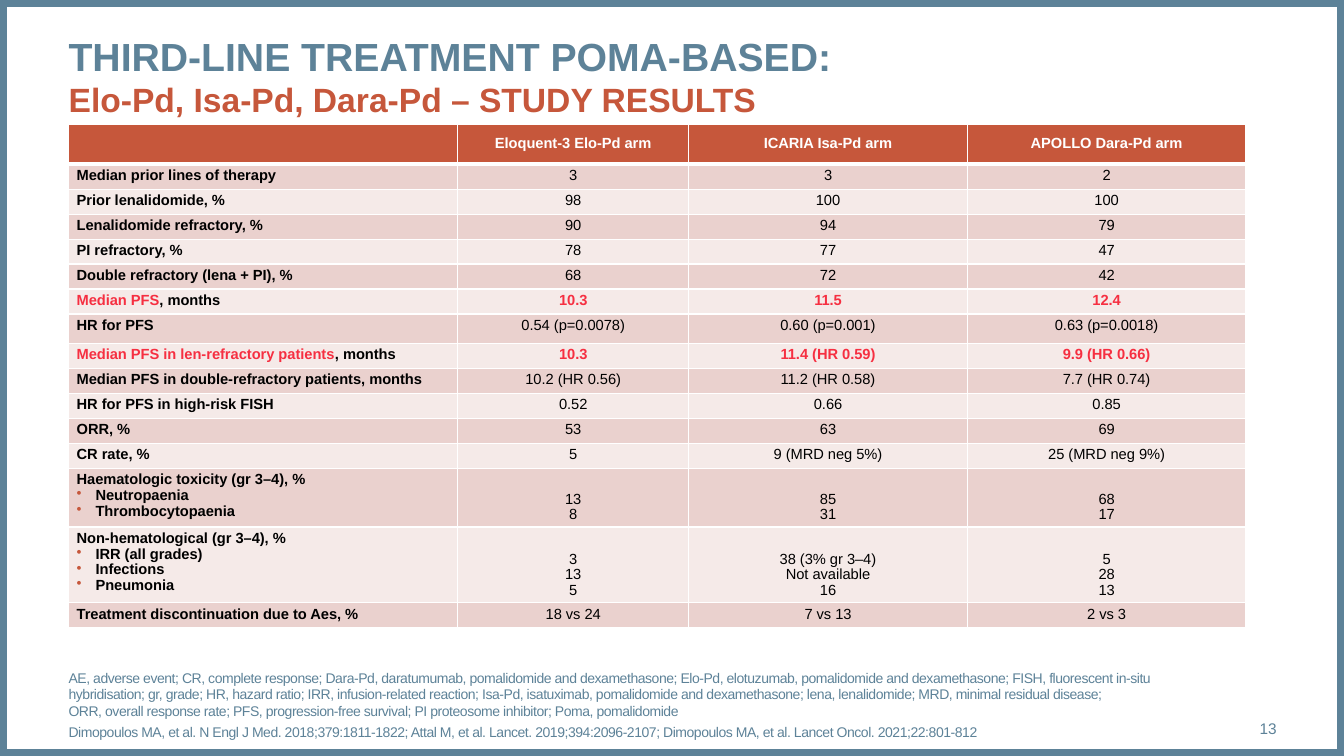
from dataclasses import dataclass
from lxml import etree
from pptx import Presentation
from pptx import util as u
from pptx.dml import color
from pptx.enum import shapes, text
from pptx.oxml import ns

Pt = u.Pt


@dataclass(frozen=True)
class Theme:
    font: str = "Arial"
    blue: str = "5D8298"
    rust: str = "C6573B"
    red: str = "F62F41"
    ink: str = "000000"
    white: str = "FFFFFF"
    bands: tuple = ("EAD1CE", "F5EAE8")
    head: float = 28
    sub: float = 24
    cell: float = 10.5
    page: float = 11
    note: float = 10


T = Theme()
LEFT = 49
WIDE, HIGH = 960, 540
COLS = (278, 165, 199, 199)
ROW = 17.7
TALL = {0: 28.5, 7: 21, 13: 41, 14: 53}
KEY = (6, 8)

HEADS = ("", "Eloquent-3 Elo-Pd arm", "ICARIA Isa-Pd arm", "APOLLO Dara-Pd arm")
ROWS = (
    ("Median prior lines of therapy", "3", "3", "2"),
    ("Prior lenalidomide, %", "98", "100", "100"),
    ("Lenalidomide refractory, %", "90", "94", "79"),
    ("PI refractory, %", "78", "77", "47"),
    ("Double refractory (lena + PI), %", "68", "72", "42"),
    ("Median PFS, months", "10.3", "11.5", "12.4"),
    ("HR for PFS", "0.54 (p=0.0078)", "0.60 (p=0.001)", "0.63 (p=0.0018)"),
    ("Median PFS in len-refractory patients, months",
     "10.3", "11.4 (HR 0.59)", "9.9 (HR 0.66)"),
    ("Median PFS in double-refractory patients, months",
     "10.2 (HR 0.56)", "11.2 (HR 0.58)", "7.7 (HR 0.74)"),
    ("HR for PFS in high-risk FISH", "0.52", "0.66", "0.85"),
    ("ORR, %", "53", "63", "69"),
    ("CR rate, %", "5", "9 (MRD neg 5%)", "25 (MRD neg 9%)"),
    ("Haematologic toxicity (gr 3–4), %\nNeutropaenia\nThrombocytopaenia",
     "13\n8", "85\n31", "68\n17"),
    ("Non-hematological (gr 3–4), %\nIRR (all grades)\nInfections\nPneumonia",
     "3\n13\n5", "38 (3% gr 3–4)\nNot available\n16", "5\n28\n13"),
    ("Treatment discontinuation due to Aes, %", "18 vs 24", "7 vs 13", "2 vs 3"),
)
TERMS = (
    "AE, adverse event; CR, complete response; Dara-Pd, daratumumab, pomalidomide "
    "and dexamethasone; Elo-Pd, elotuzumab, pomalidomide and dexamethasone; FISH, "
    "fluorescent in-situ hybridisation; gr, grade; HR, hazard ratio; IRR, "
    "infusion-related reaction; Isa-Pd, isatuximab, pomalidomide and dexamethasone; "
    "lena, lenalidomide; MRD, minimal residual disease;",
    "ORR, overall response rate; PFS, progression-free survival; PI proteosome "
    "inhibitor; Poma, pomalidomide",
)
CITES = (
    "Dimopoulos MA, et al. N Engl J Med. 2018;379:1811-1822; Attal M, et al. Lancet. "
    "2019;394:2096-2107; Dimopoulos MA, et al. Lancet Oncol. 2021;22:801-812",
)


def rgb(tint):
    return color.RGBColor.from_string(tint)


def add_run(para, words, size, tint, bold=False):
    run = para.add_run()
    run.text = words
    font = run.font
    font.name, font.size, font.bold = T.font, Pt(size), bold
    font.color.rgb = rgb(tint)
    return run


def add_box(slide, x, y, w, h, anchor):
    frame = slide.shapes.add_textbox(Pt(x), Pt(y), Pt(w), Pt(h)).text_frame
    frame.word_wrap = True
    frame.vertical_anchor = anchor
    frame.margin_left = frame.margin_right = frame.margin_top = frame.margin_bottom = 0
    return frame


def add_frame(slide):
    rect = slide.shapes.add_shape(shapes.MSO_SHAPE.RECTANGLE, 0, 0, Pt(WIDE), Pt(HIGH))
    rect.shadow.inherit = False
    rect.fill.background()
    rect.line.color.rgb = rgb(T.blue)
    rect.line.width = Pt(10)


def add_title(slide):
    para = add_box(slide, LEFT, 20, 863, 68, text.MSO_ANCHOR.MIDDLE).paragraphs[0]
    add_run(para, "THIRD-LINE TREATMENT POMA-BASED:", T.head, T.blue, True)
    para.add_line_break()
    add_run(para, "Elo-Pd, Isa-Pd, Dara-Pd – STUDY RESULTS", T.sub, T.rust, True)


def add_page(slide):
    para = add_box(slide, 850, 506, 62, 29, text.MSO_ANCHOR.MIDDLE).paragraphs[0]
    para.alignment = text.PP_ALIGN.RIGHT
    add_run(para, "13", T.page, T.blue)


def add_notes(slide):
    frame = add_box(slide, LEFT, 500, 801, 29, text.MSO_ANCHOR.BOTTOM)
    for i, lines in enumerate((TERMS, CITES)):
        para = frame.add_paragraph() if i else frame.paragraphs[0]
        if i:
            para.space_before = Pt(3)
        for j, line in enumerate(lines):
            if j:
                para.add_line_break()
            run = add_run(para, line, T.note, T.blue)
            run.font._element.set("spc", "-30")


def add_bullet(para):
    props = para._p.get_or_add_pPr()
    props.set("marL", str(Pt(13.5)))
    props.set("indent", str(-Pt(13.5)))
    tint = etree.SubElement(props, ns.qn("a:buClr"))
    etree.SubElement(tint, ns.qn("a:srgbClr"), val=T.rust)
    etree.SubElement(props, ns.qn("a:buChar"), char="•")


def set_edge(cell, side, width):
    props = cell._tc.get_or_add_tcPr()
    line = etree.SubElement(props, ns.qn("a:" + side), w=str(Pt(width)))
    fill = etree.SubElement(line, ns.qn("a:solidFill"))
    etree.SubElement(fill, ns.qn("a:srgbClr"), val=T.white)


def style_cell(cell, fill, top, base):
    cell.margin_left = cell.margin_right = Pt(5.76)
    cell.margin_top = cell.margin_bottom = Pt(2.88)
    for side, width in (("lnL", 1), ("lnR", 1), ("lnT", top), ("lnB", base)):
        set_edge(cell, side, width)
    cell.fill.solid()
    cell.fill.fore_color.rgb = rgb(fill)


def fill_cell(cell, words, row, col):
    frame = cell.text_frame
    for i, line in enumerate(words.split("\n")):
        para = frame.add_paragraph() if i else frame.paragraphs[0]
        para.line_spacing = 0.96
        if col:
            para.alignment = text.PP_ALIGN.CENTER
        elif i:
            add_bullet(para)
        if row == 0:
            add_run(para, line, T.cell, T.white, True)
        elif row in KEY and col == 0:
            name, comma, unit = line.partition(",")
            add_run(para, name, T.cell, T.red, True)
            add_run(para, comma + unit, T.cell, T.ink, True)
        else:
            key = row in KEY
            add_run(para, line, T.cell, T.red if key else T.ink, key or col == 0)


def add_grid(slide):
    data = (HEADS,) + ROWS
    tall = [TALL.get(i, ROW) for i in range(len(data))]
    grid = slide.shapes.add_table(
        len(data), len(COLS), Pt(LEFT), Pt(88.8), Pt(sum(COLS)), Pt(sum(tall))).table
    for i, width in enumerate(COLS):
        grid.columns[i].width = Pt(width)
    for row, items in enumerate(data):
        grid.rows[row].height = Pt(tall[row])
        fill = T.bands[(row - 1) % 2] if row else T.rust
        for col, words in enumerate(items):
            cell = grid.cell(row, col)
            style_cell(cell, fill, 3 if row == 1 else 1, 1 if row else 3)
            if row == 0:
                cell.vertical_anchor = text.MSO_ANCHOR.MIDDLE
            elif col and "\n" in words:
                cell.vertical_anchor = text.MSO_ANCHOR.BOTTOM
            if words:
                fill_cell(cell, words, row, col)


def main():
    deck = Presentation()
    deck.slide_width, deck.slide_height = Pt(WIDE), Pt(HIGH)
    slide = deck.slides.add_slide(deck.slide_layouts[6])
    add_frame(slide)
    add_title(slide)
    add_grid(slide)
    add_notes(slide)
    add_page(slide)
    deck.save("out.pptx")


if __name__ == "__main__":
    main()
